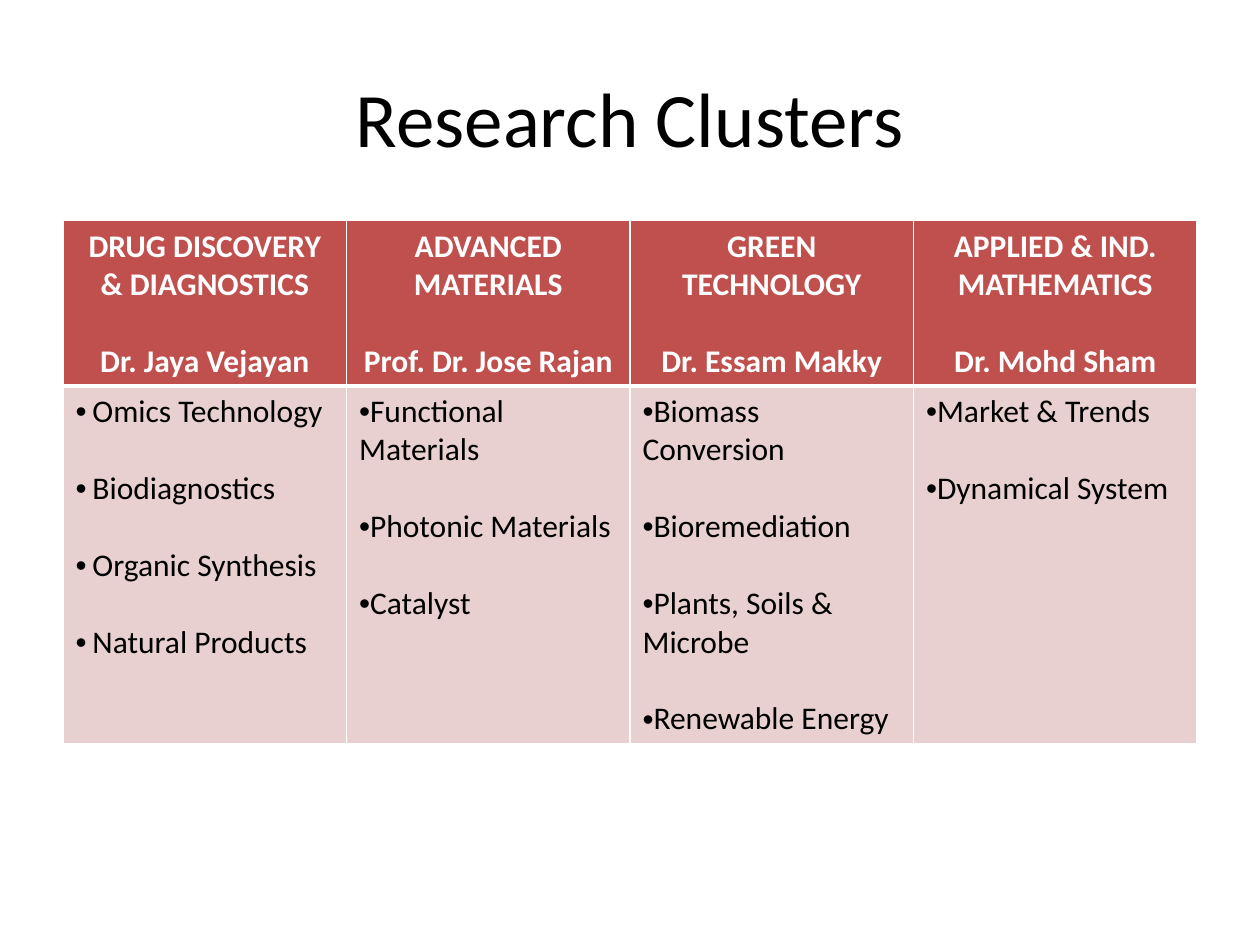
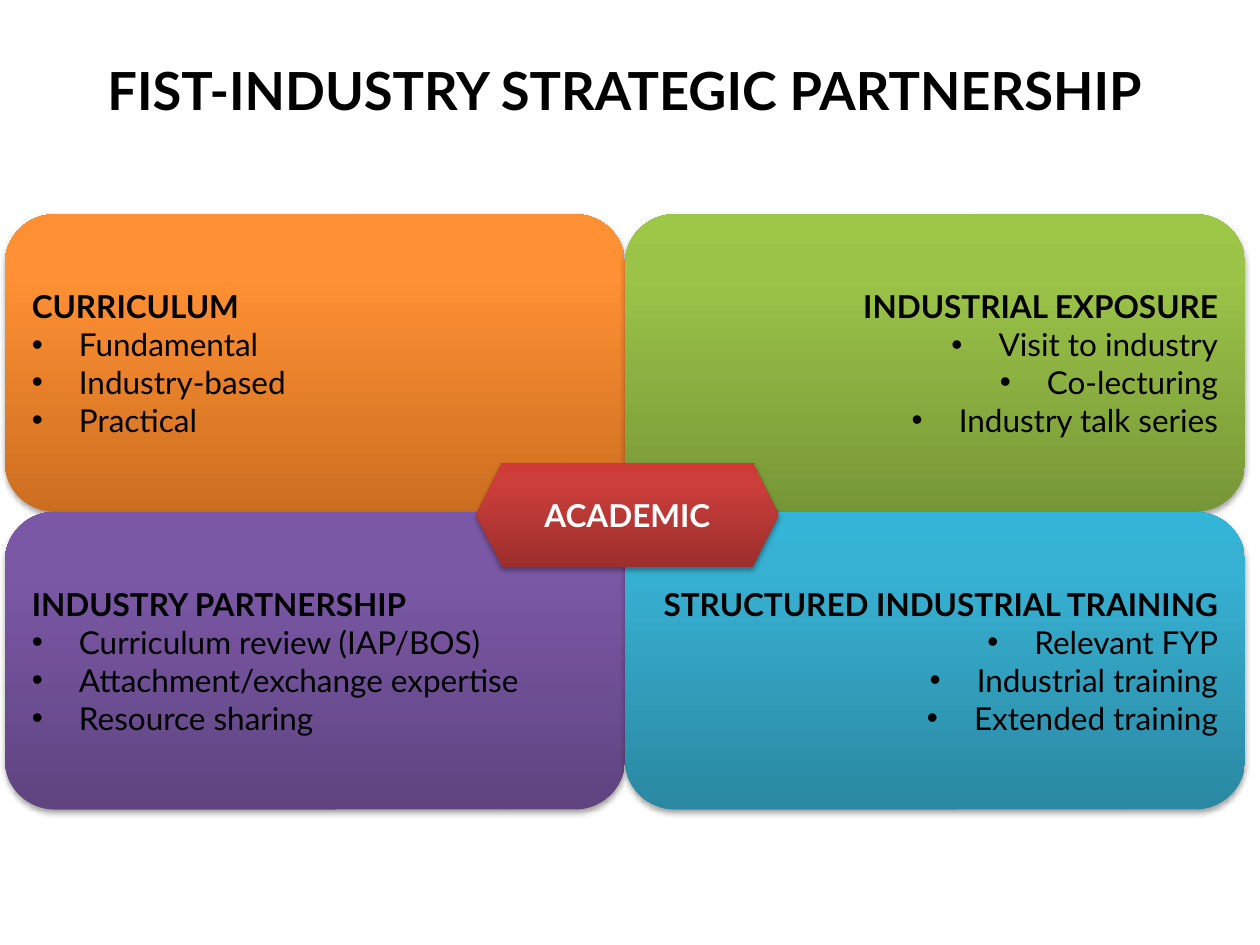
from copy import deepcopy

from lxml import etree
from pptx import Presentation
from pptx.dml.color import RGBColor
from pptx.enum import shapes, text
from pptx.oxml import ns
from pptx.util import Cm, Pt

BLACK = RGBColor(0x00, 0x00, 0x00)
WHITE = RGBColor(0xFF, 0xFF, 0xFF)
HEADER_RED = RGBColor(0xC0, 0x50, 0x4D)
BODY_PINK = RGBColor(0xE8, 0xD0, 0xD0)
ORANGE = [RGBColor(0xCC, 0x6E, 0x20), RGBColor(0xFF, 0x90, 0x34), RGBColor(0xFF, 0x91, 0x36)]
GREEN = [RGBColor(0x77, 0x97, 0x37), RGBColor(0x9B, 0xC3, 0x48), RGBColor(0x9D, 0xC7, 0x46)]
PURPLE = [RGBColor(0x5F, 0x44, 0x80), RGBColor(0x7B, 0x58, 0xA6), RGBColor(0x7C, 0x57, 0xA8)]
TEAL = [RGBColor(0x2A, 0x88, 0xA2), RGBColor(0x37, 0xB1, 0xD2), RGBColor(0x34, 0xB4, 0xD6)]
RED = [RGBColor(0x9C, 0x2F, 0x2D), RGBColor(0xCB, 0x3E, 0x3A), RGBColor(0xCE, 0x3B, 0x37)]
STOP_POSITIONS = (0, 0.8, 1)

LEFT, CENTER, RIGHT = text.PP_ALIGN.LEFT, text.PP_ALIGN.CENTER, text.PP_ALIGN.RIGHT
CALIBRI = {"name": "Calibri", "size": Pt(18), "bold": False}
LATO = {"name": "Lato", "size": Pt(18), "bold": False}
LINE_GAP = Pt(22)

CLUSTERS = [
    ("DRUG DISCOVERY & DIAGNOSTICS", "Dr. Jaya Vejayan", Cm(0.34),
     ["Omics Technology", "Biodiagnostics", "Organic Synthesis", "Natural Products"]),
    ("ADVANCED MATERIALS", "Prof. Dr. Jose Rajan", 0,
     ["Functional Materials", "Photonic Materials", "Catalyst"]),
    ("GREEN TECHNOLOGY", "Dr. Essam Makky", 0,
     ["Biomass Conversion", "Bioremediation", "Plants, Soils & Microbe", "Renewable Energy"]),
    ("APPLIED & IND. MATHEMATICS", "Dr. Mohd Sham", 0,
     ["Market & Trends", "Dynamical System"]),
]
QUADRANTS = [
    ("CURRICULUM", ORANGE, ["Fundamental", "Industry-based", "Practical"]),
    ("INDUSTRIAL EXPOSURE", GREEN, ["Visit to industry", "Co-lecturing", "Industry talk series"]),
    ("INDUSTRY PARTNERSHIP", PURPLE,
     ["Curriculum review (IAP/BOS)", "Attachment/exchange expertise", "Resource sharing"]),
    ("STRUCTURED INDUSTRIAL TRAINING", TEAL,
     ["Relevant FYP", "Industrial training", "Extended training"]),
]


def set_all(target, values):
    for name, value in values.items():
        setattr(target, name, value)


def add_child(parent, tag, **attributes):
    return etree.SubElement(parent, ns.qn(tag), attributes)


def write_lines(frame, lines, font, color, **layout):
    for index, line in enumerate(lines):
        paragraph = frame.paragraphs[0] if index == 0 else frame.add_paragraph()
        run = paragraph.add_run()
        run.text = line
        set_all(run.font, font)
        run.font.color.rgb = color
        set_all(paragraph, layout)
        if index == 0:
            paragraph.space_before = Pt(0)


def add_bullets(paragraphs, indent):
    for paragraph in paragraphs:
        properties = paragraph._p.get_or_add_pPr()
        properties.set("marL", str(indent))
        properties.set("indent", str(-indent))
        add_child(properties, "a:buFont", typeface="Arial")
        add_child(properties, "a:buChar", char="•")


def add_title(slide, box, title, font):
    frame = slide.shapes.add_textbox(*box).text_frame
    set_all(frame, {"word_wrap": True, "vertical_anchor": text.MSO_ANCHOR.MIDDLE})
    write_lines(frame, [title], font, BLACK, alignment=CENTER)


def style_cell(cell, color, bottom_width):
    properties = cell._tc.get_or_add_tcPr()
    for side, width in (("L", 1), ("R", 1), ("T", 1), ("B", bottom_width)):
        border = add_child(properties, f"a:ln{side}", w=str(Pt(width)))
        fill = add_child(border, "a:solidFill")
        add_child(fill, "a:srgbClr", val=str(WHITE))
    cell.fill.solid()
    cell.fill.fore_color.rgb = color


def add_cluster_table(slide, box):
    left, top, width, height = box
    header_height = Cm(3.33)
    table = slide.shapes.add_table(2, len(CLUSTERS), left, top, width, height).table
    table.rows[0].height = header_height
    table.rows[1].height = height - header_height
    for index, (cluster, leader, indent, topics) in enumerate(CLUSTERS):
        header, body = table.cell(0, index), table.cell(1, index)
        style_cell(header, HEADER_RED, 3)
        style_cell(body, BODY_PINK, 1)
        write_lines(header.text_frame, [cluster, leader], CALIBRI | {"bold": True}, WHITE,
                    alignment=CENTER, space_before=LINE_GAP)
        write_lines(body.text_frame, topics, CALIBRI, BLACK,
                    alignment=LEFT, space_before=LINE_GAP)
        add_bullets(body.text_frame.paragraphs, indent)


def add_glossy_shape(slide, kind, box, colors):
    shape = slide.shapes.add_shape(kind, *box)
    shape.line.fill.background()
    shape.fill.gradient()
    shape.fill.gradient_angle = 90
    stops = shape.element.xpath(".//a:gsLst")[0]
    stops.append(deepcopy(stops[-1]))
    for stop, color, position in zip(shape.fill.gradient_stops, colors, STOP_POSITIONS):
        stop.color.rgb = color
        stop.position = position
    shape.shadow.inherit = False
    effects = shape.element.xpath("./p:spPr/a:effectLst")[0]
    shadow = add_child(effects, "a:outerShdw", blurRad=str(Pt(3.1)), dist=str(Pt(1.8)),
                       dir="5400000", rotWithShape="0")
    shade = add_child(shadow, "a:srgbClr", val=str(BLACK))
    add_child(shade, "a:alpha", val="35000")
    shape.text_frame.vertical_anchor = text.MSO_ANCHOR.MIDDLE
    return shape


def add_quadrants(slide, box):
    left, top, width, height = box
    cell_width, cell_height = width // 2, height // 2
    for index, (heading, colors, items) in enumerate(QUADRANTS):
        row, column = divmod(index, 2)
        cell_box = (left + column * cell_width, top + row * cell_height, cell_width, cell_height)
        shape = add_glossy_shape(slide, shapes.MSO_SHAPE.ROUNDED_RECTANGLE, cell_box, colors)
        frame = shape.text_frame
        write_lines(frame, [heading, *items], LATO, BLACK, alignment=RIGHT if column else LEFT)
        frame.paragraphs[0].runs[0].font.bold = True
        add_bullets(frame.paragraphs[1:], Cm(0.95))


def add_hub(slide, box, label):
    hub = add_glossy_shape(slide, shapes.MSO_SHAPE.HEXAGON, box, RED)
    write_lines(hub.text_frame, [label], LATO | {"bold": True}, WHITE, alignment=CENTER)


def add_clusters_slide(slide):
    add_title(slide, (Cm(1.27), Cm(0.76), Cm(22.86), Cm(3.18)), "Research Clusters",
              CALIBRI | {"size": Pt(44)})
    add_cluster_table(slide, (Cm(1.27), Cm(4.45), Cm(22.86), Cm(10.55)))


def add_partnership_slide(slide):
    add_title(slide, (Cm(1.09), Cm(1.04), Cm(23.01), Cm(1.55)),
              "FIST-INDUSTRY STRATEGIC PARTNERSHIP", LATO | {"size": Pt(30), "bold": True})
    add_quadrants(slide, (Cm(0.1), Cm(4.32), Cm(25), Cm(12)))
    add_hub(slide, (Cm(9.6), Cm(9.33), Cm(6.1), Cm(2.1)), "ACADEMIC")


def main():
    presentation = Presentation()
    set_all(presentation, {"slide_width": Cm(25.4), "slide_height": Cm(19.05)})
    for build in (add_clusters_slide, add_partnership_slide):
        build(presentation.slides.add_slide(presentation.slide_layouts[6]))
    presentation.save("out.pptx")


if __name__ == "__main__":
    main()
